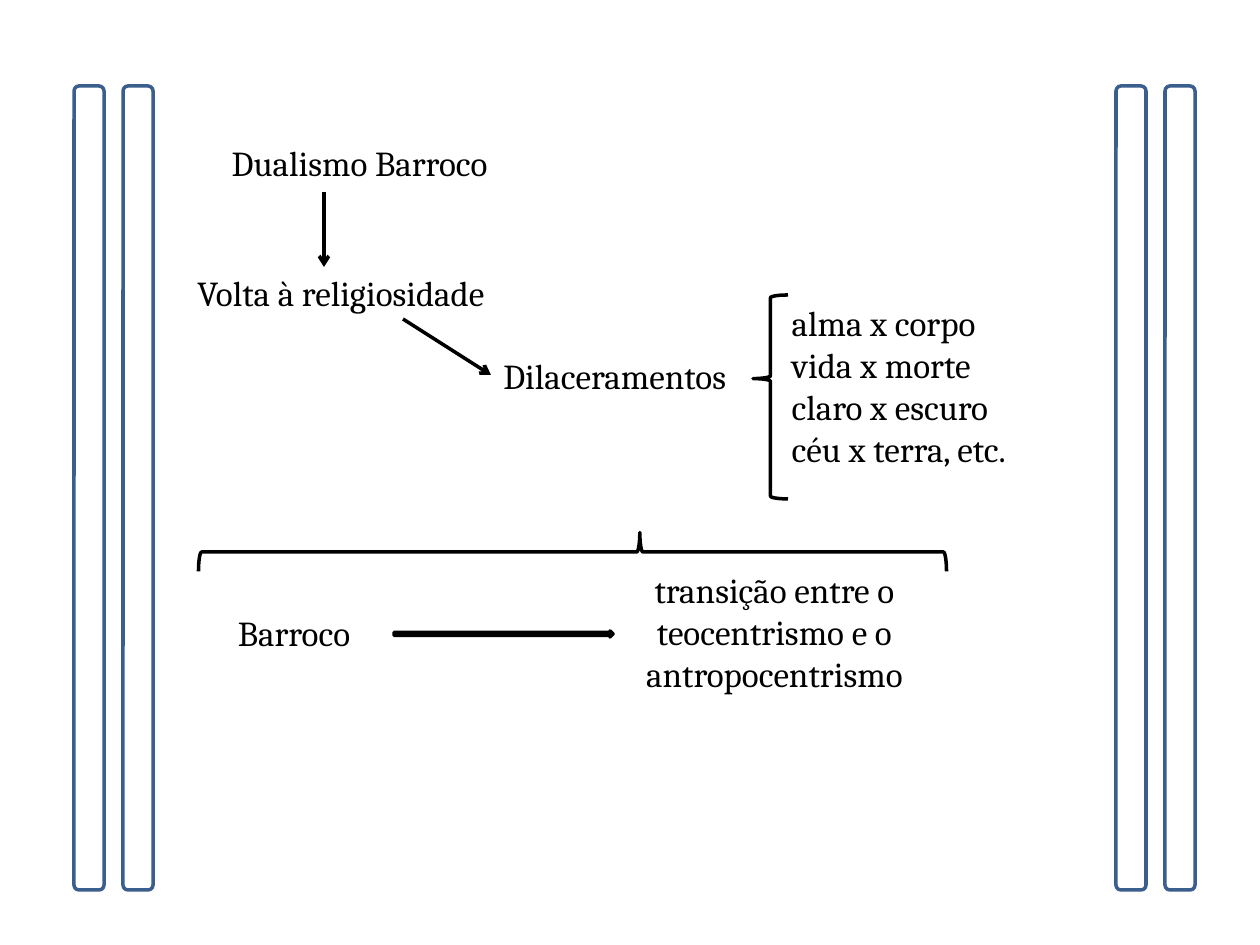
from dataclasses import dataclass

from lxml import etree
from pptx import Presentation
from pptx.dml.color import RGBColor
from pptx.enum.shapes import MSO_CONNECTOR, MSO_SHAPE
from pptx.enum.text import MSO_ANCHOR, MSO_AUTO_SIZE, PP_ALIGN
from pptx.oxml.ns import qn
from pptx.util import Emu, Pt

LEFT, CENTER = PP_ALIGN.LEFT, PP_ALIGN.CENTER
TOP = MSO_ANCHOR.TOP
NO_FIT = MSO_AUTO_SIZE.NONE
STRAIGHT = MSO_CONNECTOR.STRAIGHT
BRACE, BAR, ARROW = MSO_SHAPE.LEFT_BRACE, MSO_SHAPE.ROUNDED_RECTANGLE, MSO_SHAPE.RIGHT_ARROW
PX_PER_INCH = 126


@dataclass(frozen=True)
class Theme:
    font: str = "Cambria"
    size: int = 20
    line_width: int = 2
    ink: str = "000000"
    paper: str = "FFFFFF"
    bar_line: str = "3A5F8C"


@dataclass(frozen=True)
class Box:
    x: int
    y: int
    w: int
    h: int

    def emu(self) -> list[Emu]:
        return [px(v) for v in (self.x, self.y, self.w, self.h)]


@dataclass(frozen=True)
class Label:
    text: str
    box: Box
    align: PP_ALIGN = LEFT


@dataclass(frozen=True)
class Link:
    x1: int
    y1: int
    x2: int
    y2: int


THEME = Theme()


def px(value: int) -> Emu:
    return Emu(round(value * 914400 / PX_PER_INCH))


def rgb(value: str) -> RGBColor:
    return RGBColor.from_string(value)


def write_text(sp, text: str, *, align=LEFT, size=THEME.size, color=THEME.ink) -> None:
    """Write one paragraph per line, without bullets."""
    tf = sp.text_frame
    tf.word_wrap = True
    tf.auto_size = NO_FIT
    tf.vertical_anchor = TOP
    tf.text = text
    for p in tf.paragraphs:
        p.alignment = align
        p.space_before = Pt(0)
        pPr = p._p.get_or_add_pPr()
        pPr.set("marL", "0")
        pPr.set("indent", "0")
        etree.SubElement(pPr, qn("a:buNone"))
        for r in p.runs:
            r.font.name = THEME.font
            r.font.size = Pt(size)
            r.font.color.rgb = rgb(color)


def fill_placeholder(sp, label: Label) -> None:
    sp.left, sp.top, sp.width, sp.height = label.box.emu()
    write_text(sp, label.text, align=label.align)


def add_label(slide, label: Label) -> None:
    write_text(slide.shapes.add_textbox(*label.box.emu()), label.text, align=label.align)


def add_outline(slide, kind, box: Box, *, line=THEME.ink, fill=None, adj=(), rotation=0):
    sp = slide.shapes.add_shape(kind, *box.emu())
    sp.shadow.inherit = False
    sp.rotation = rotation
    for i, value in enumerate(adj):
        sp.adjustments[i] = value
    if fill:
        sp.fill.solid()
        sp.fill.fore_color.rgb = rgb(fill)
    else:
        sp.fill.background()
    sp.line.color.rgb = rgb(line)
    sp.line.width = Pt(THEME.line_width)


def add_link(slide, link: Link) -> None:
    ends = [px(v) for v in (link.x1, link.y1, link.x2, link.y2)]
    cxn = slide.shapes.add_connector(STRAIGHT, *ends)
    cxn.line.color.rgb = rgb(THEME.ink)
    cxn.line.width = Pt(THEME.line_width)
    etree.SubElement(cxn.line._get_or_add_ln(), qn("a:tailEnd"), type="arrow")
    etree.SubElement(cxn._element.spPr, qn("a:effectLst"))


TITLE = Label("Dualismo Barroco ", Box(185, 135, 357, 55), CENTER)
OPPOSITES = Label("alma x corpo\nvida x morte\nclaro x escuro\ncéu x terra, etc.",
                  Box(779, 295, 297, 183))
LABELS = [
    Label("Volta à religiosidade", Box(185, 265, 435, 55)),
    Label("Dilaceramentos", Box(491, 348, 318, 55)),
    Label("transição entre o teocentrismo e o antropocentrismo",
          Box(612, 562, 325, 140), CENTER),
    Label("Barroco", Box(195, 605, 198, 55), CENTER),
]
LINKS = [Link(324, 192, 324, 267), Link(403, 319, 491, 375)]
BRACES = [(Box(753, 295, 35, 204), 0), (Box(553, 178, 39, 748), 90)]
BRACE_ADJ = (0.08, 0.41)
BAR_PAIRS, BAR_STEP = (74, 1116), 49


def main() -> None:
    prs = Presentation()
    prs.slide_width, prs.slide_height = px(1260), px(945)
    slide = prs.slides.add_slide(prs.slide_layouts[1])

    # Title and list of opposites
    fill_placeholder(slide.shapes.title, TITLE)
    fill_placeholder(slide.placeholders[1], OPPOSITES)

    # Remaining labels and the arrows between them
    for label in LABELS:
        add_label(slide, label)
    for link in LINKS:
        add_link(slide, link)

    # Braces and the transition arrow
    for box, rotation in BRACES:
        add_outline(slide, BRACE, box, adj=BRACE_ADJ, rotation=rotation)
    add_outline(slide, ARROW, Box(394, 631, 219, 6), fill=THEME.ink)

    # Pairs of side bars
    for start in BAR_PAIRS:
        for i in range(2):
            add_outline(slide, BAR, Box(start + i * BAR_STEP, 86, 30, 804),
                        line=THEME.bar_line, fill=THEME.paper)

    prs.save("out.pptx")


if __name__ == "__main__":
    main()
